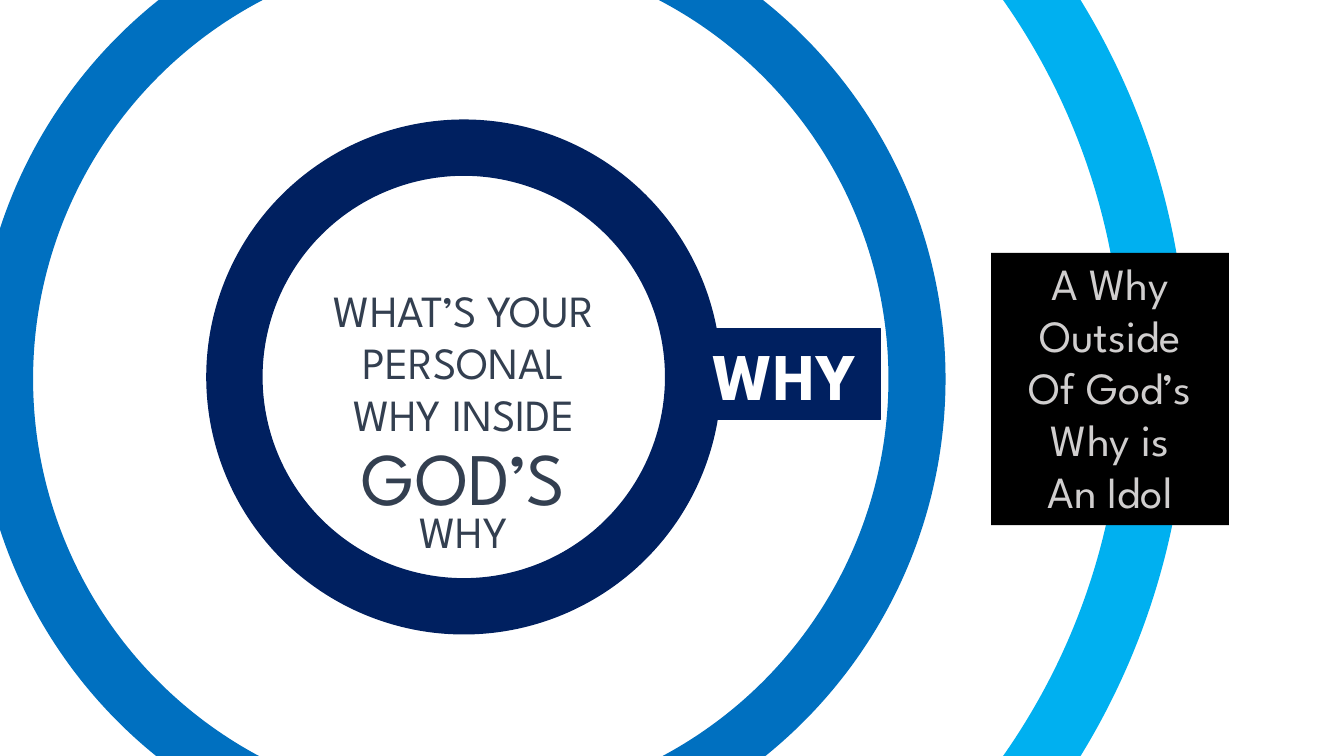
from pptx import Presentation
from pptx.dml.color import RGBColor
from pptx.enum.shapes import MSO_SHAPE
from pptx.enum.text import MSO_ANCHOR, PP_ALIGN
from pptx.util import Inches, Pt

FONT = "League Spartan"
COLOURS = {
    "sky": "00B0F0",
    "blue": "0070C0",
    "navy": "002060",
    "white": "FFFFFF",
    "slate": "333F50",
    "black": "000000",
    "silver": "D0CECE",
}

# centre x, centre y, diameter (inches), line width (points), colour
RINGS = [
    (4.61, 3.75, 13.69, 46.25, "sky"),
    (4.57, 3.76, 9.05, 40.75, "blue"),
    (4.6, 3.74, 4.55, 40.25, "navy"),
]

# text, size, line spacing (points)
BODY = (31.8, 37.1)
LABEL_LINES = [("WHY", 47.6, None)]
QUESTION_LINES = [
    ("WHAT’S YOUR", *BODY),
    ("PERSONAL", *BODY),
    ("WHY INSIDE", *BODY),
    ("GOD’S", 52.9, 57.4),
    ("WHY", 31.8, 26.5),
]
IDOL_LINES = [(text, *BODY) for text in
              ("A Why", "Outside", "Of God’s", "Why is", "An Idol")]


def colour(name):
    return RGBColor.from_string(COLOURS[name])


def add_ring(page, centre_x, centre_y, diameter, width, line):
    left, top = centre_x - diameter / 2, centre_y - diameter / 2
    ring = page.shapes.add_shape(
        MSO_SHAPE.OVAL, Inches(left), Inches(top), Inches(diameter), Inches(diameter))
    ring.shadow.inherit = False
    ring.fill.background()
    ring.line.color.rgb = colour(line)
    ring.line.width = Pt(width)


def add_panel(page, place, fill):
    panel = page.shapes.add_shape(MSO_SHAPE.RECTANGLE, *map(Inches, place))
    panel.shadow.inherit = False
    panel.fill.solid()
    panel.fill.fore_color.rgb = colour(fill)
    panel.line.fill.background()
    return panel


def write_lines(box, lines, ink, anchor=MSO_ANCHOR.TOP, bold=False):
    frame = box.text_frame
    frame.word_wrap = True
    frame.vertical_anchor = anchor
    frame.text = "\n".join(text for text, _, _ in lines)
    for para, (_, size, spacing) in zip(frame.paragraphs, lines):
        para.alignment = PP_ALIGN.CENTER
        if spacing:
            para.line_spacing = Pt(spacing)
        font = para.runs[0].font
        font.name = FONT
        font.size = Pt(size)
        font.bold = bold
        font.color.rgb = colour(ink)


def main():
    deck = Presentation()
    deck.slide_width, deck.slide_height = Inches(13.33), Inches(7.5)
    page = deck.slides.add_slide(deck.slide_layouts[6])

    for ring in RINGS:
        add_ring(page, *ring)

    label = add_panel(page, (6.83, 3.26, 1.9, 0.9), "navy")
    label.line.color.rgb = colour("navy")
    label.line.width = Pt(0.75)
    write_lines(label, LABEL_LINES, "white", MSO_ANCHOR.MIDDLE, bold=True)

    question = page.shapes.add_textbox(*map(Inches, (2.64, 2.77, 3.92, 2.86)))
    write_lines(question, QUESTION_LINES, "slate")

    idol = add_panel(page, (9.83, 2.51, 2.36, 2.7), "black")
    write_lines(idol, IDOL_LINES, "silver")

    deck.save("out.pptx")


if __name__ == "__main__":
    main()
